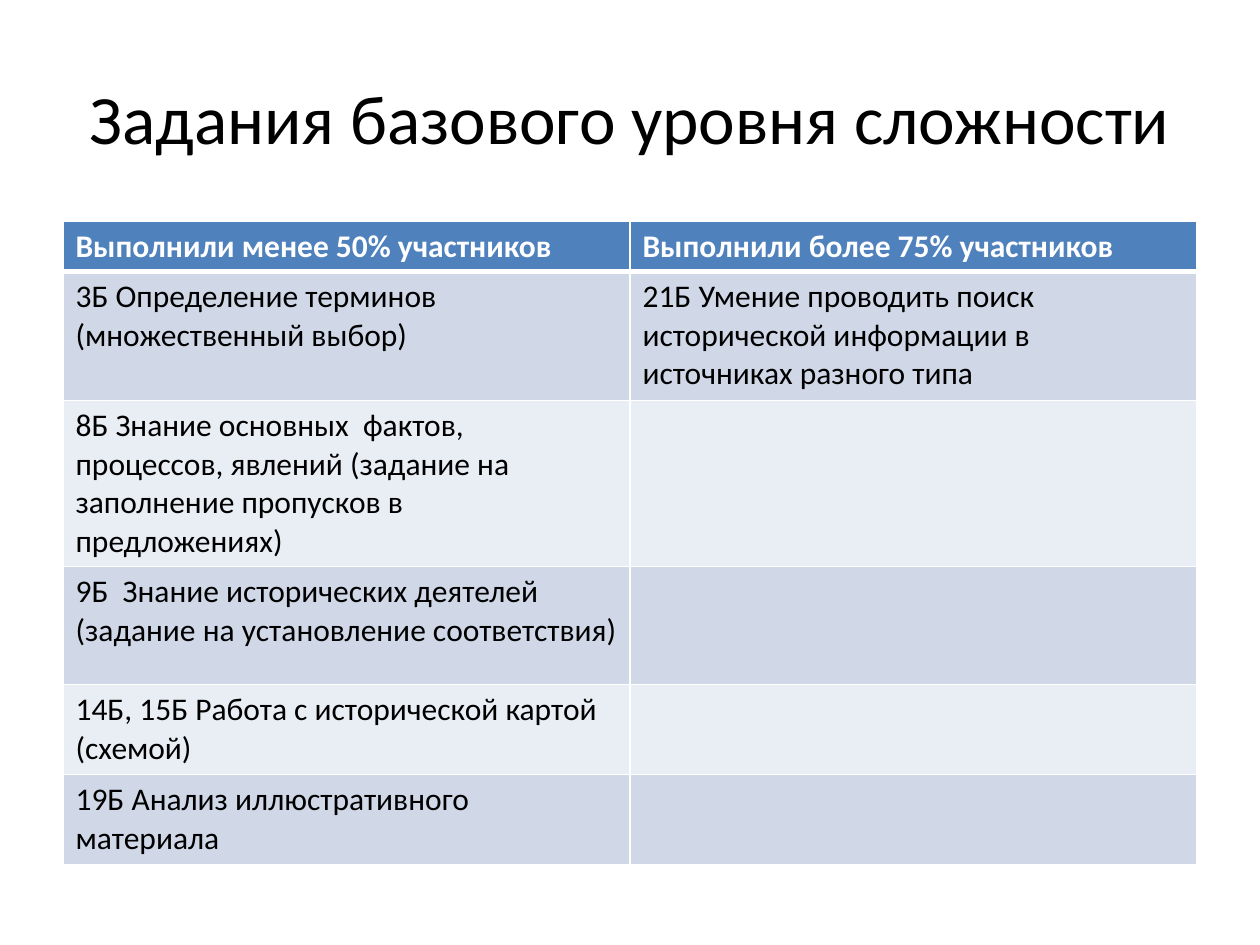
"""Builds a slide with a table of basic-level tasks by completion rate."""
from lxml.etree import SubElement
from pptx import Presentation
from pptx.dml.color import RGBColor
from pptx.enum.text import MSO_ANCHOR, PP_ALIGN
from pptx.oxml.ns import qn
from pptx.util import Emu, Pt

COLORS = {
    "black": "000000",
    "white": "FFFFFF",
    "header": "4F81BD",
    "odd": "D0D8E8",
    "even": "E9EDF4",
}
TITLE = "Задания базового уровня сложности"
ROWS = [
    ("Выполнили менее 50% участников", "Выполнили более 75% участников"),
    ("3Б Определение терминов (множественный выбор)",
     "21Б Умение проводить поиск исторической информации в источниках разного типа"),
    ("8Б Знание основных  фактов, процессов, явлений "
     "(задание на заполнение пропусков в предложениях)", ""),
    ("9Б  Знание исторических деятелей (задание на установление соответствия)", ""),
    ("14Б, 15Б Работа с исторической картой (схемой)", ""),
    ("19Б Анализ иллюстративного материала", ""),
]
ROW_HEIGHTS = [50, 129, 166, 118, 90, 90]
TITLE_BOX = (63, 38, 1134, 157)
TABLE_LEFT, TABLE_TOP, TABLE_WIDTH = 63, 221, 1134


def px(length):
    """Turn pixels into EMU."""
    return Emu(round(length * 914400 / 126))


def rgb(name):
    """Look up a named colour."""
    return RGBColor.from_string(COLORS[name])


def write(frame, text, size=18, color="black", bold=False, align=PP_ALIGN.LEFT):
    """Write one formatted paragraph into a text frame."""
    frame.word_wrap = True
    para = frame.paragraphs[0]
    para.alignment = align
    span = para.add_run()
    span.text = text
    span.font.name = "Calibri"
    span.font.size = Pt(size)
    span.font.bold = bold
    span.font.color.rgb = rgb(color)


def draw_borders(cell, bottom):
    """Give a cell white borders with the stated bottom width in points."""
    properties = cell._tc.get_or_add_tcPr()
    for side, width in (("L", 1), ("R", 1), ("T", 1), ("B", bottom)):
        line = SubElement(properties, qn(f"a:ln{side}"), w=str(Pt(width)))
        fill = SubElement(line, qn("a:solidFill"))
        SubElement(fill, qn("a:srgbClr"), val=COLORS["white"])


def add_title(slide):
    """Add the centred title."""
    box = slide.shapes.add_textbox(*map(px, TITLE_BOX))
    box.text_frame.vertical_anchor = MSO_ANCHOR.MIDDLE
    write(box.text_frame, TITLE, size=39.6, align=PP_ALIGN.CENTER)


def add_tasks(slide):
    """Add the table of tasks."""
    columns = len(ROWS[0])
    table = slide.shapes.add_table(
        len(ROWS), columns, px(TABLE_LEFT), px(TABLE_TOP),
        px(TABLE_WIDTH), px(sum(ROW_HEIGHTS))).table
    for column in table.columns:
        column.width = px(TABLE_WIDTH / columns)
    for r, (texts, height) in enumerate(zip(ROWS, ROW_HEIGHTS)):
        header = r == 0
        table.rows[r].height = px(height)
        band = "header" if header else "odd" if r % 2 else "even"
        for c, text in enumerate(texts):
            cell = table.cell(r, c)
            draw_borders(cell, bottom=3 if header else 1)
            cell.fill.solid()
            cell.fill.fore_color.rgb = rgb(band)
            if text:
                write(cell.text_frame, text, bold=header,
                      color="white" if header else "black")


def main():
    """Build and save the deck."""
    deck = Presentation()
    deck.slide_width, deck.slide_height = px(1260), px(945)
    page = deck.slides.add_slide(deck.slide_layouts[6])
    add_title(page)
    add_tasks(page)
    deck.save("out.pptx")


if __name__ == "__main__":
    main()
